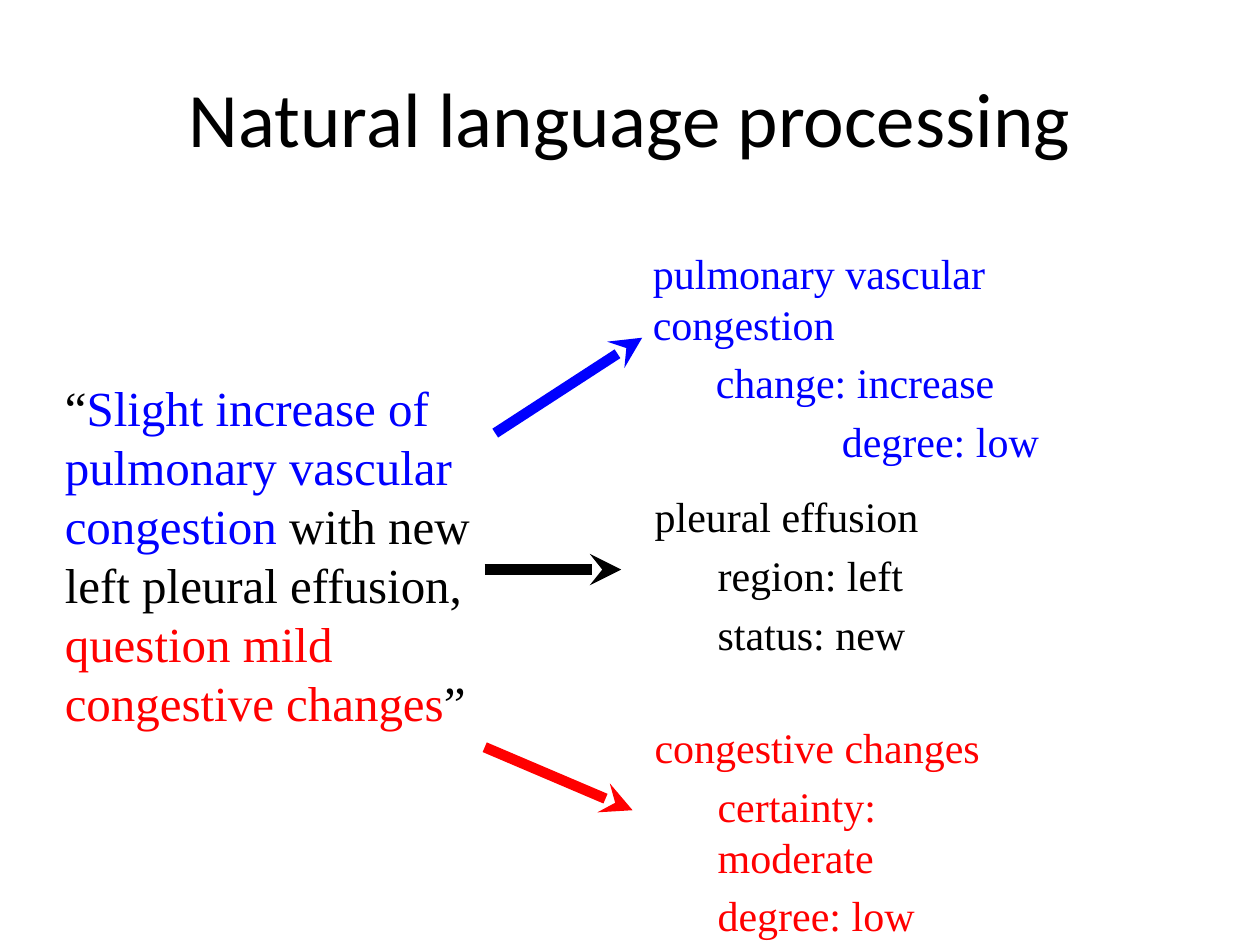
from lxml import etree
from pptx import Presentation
from pptx.dml.color import RGBColor
from pptx.enum.shapes import MSO_CONNECTOR
from pptx.enum.text import MSO_ANCHOR, MSO_AUTO_SIZE, PP_ALIGN
from pptx.oxml.ns import qn
from pptx.util import Pt

BLACK = RGBColor(0, 0, 0)
BLUE = RGBColor(0, 0, 255)
RED = RGBColor(255, 0, 0)
STRAIGHT = MSO_CONNECTOR.STRAIGHT
MIDDLE, TOP = MSO_ANCHOR.MIDDLE, MSO_ANCHOR.TOP
LEFT, CENTER = PP_ALIGN.LEFT, PP_ALIGN.CENTER
FIT_TEXT, FIXED = MSO_AUTO_SIZE.SHAPE_TO_FIT_TEXT, MSO_AUTO_SIZE.NONE
INDENT = 36


def add_text(page, place, paragraphs, size, font="Times New Roman",
             align=LEFT, anchor=TOP, fit=FIT_TEXT):
    """Add a text box; each paragraph is (left indent, [(text, colour), ...])."""
    frame = page.shapes.add_textbox(*map(Pt, place)).text_frame
    frame.word_wrap = True
    frame.auto_size = fit
    frame.vertical_anchor = anchor
    for number, (indent, spans) in enumerate(paragraphs):
        para = frame.add_paragraph() if number else frame.paragraphs[0]
        para.alignment = align
        if number:
            para.space_before = Pt(size * 0.2)
        if indent:
            para.level = 1
            para._p.get_or_add_pPr().set("marL", str(Pt(indent)))
        for text, color in spans:
            span = para.add_run()
            span.text = text
            span.font.name = font
            span.font.size = Pt(size)
            span.font.color.rgb = color


def add_finding(page, place, color, lines):
    """Add a finding with its indented attributes."""
    paragraphs = [(indent, [(text, color)]) for indent, text in lines]
    add_text(page, place, paragraphs, size=24)


def add_arrow(page, ends, color):
    arrow = page.shapes.add_connector(STRAIGHT, *map(Pt, ends))
    arrow.line.color.rgb = color
    arrow.line.width = Pt(6)
    etree.SubElement(arrow.line._get_or_add_ln(), qn("a:tailEnd"), type="stealth")
    etree.SubElement(arrow._element.spPr, qn("a:effectLst"))


def main():
    deck = Presentation()
    deck.slide_width, deck.slide_height = Pt(720), Pt(540)
    page = deck.slides.add_slide(deck.slide_layouts[6])

    add_text(page, (36, 21.6, 648, 90),
             [(0, [("Natural language processing", BLACK)])],
             size=44, font="Calibri", align=CENTER, anchor=MIDDLE, fit=FIXED)

    report = [
        ("“", BLACK),
        ("Slight increase of pulmonary vascular congestion", BLUE),
        (" with new left pleural effusion, ", BLACK),
        ("question mild congestive changes", RED),
        ("”", BLACK),
    ]
    add_text(page, (30, 212.4, 283, 209), [(0, report)], size=28)

    findings = [
        ((366, 138, 310, 105), (283, 247.5, 367, 193), BLUE,
         [(0, "pulmonary vascular congestion"),
          (INDENT, "change: increase"),
          (3 * INDENT, "degree: low")]),
        ((367, 277, 166, 105), (277, 325.5, 355, 325.5), BLACK,
         [(0, "pleural effusion"),
          (INDENT, "region: left"),
          (INDENT, "status: new")]),
        ((367, 409, 232, 105), (277, 427, 361.5, 463), RED,
         [(0, "congestive changes"),
          (INDENT, "certainty: moderate"),
          (INDENT, "degree: low")]),
    ]
    for place, arrow_ends, color, lines in findings:
        add_arrow(page, arrow_ends, color)
        add_finding(page, place, color, lines)

    deck.save("out.pptx")


if __name__ == "__main__":
    main()
